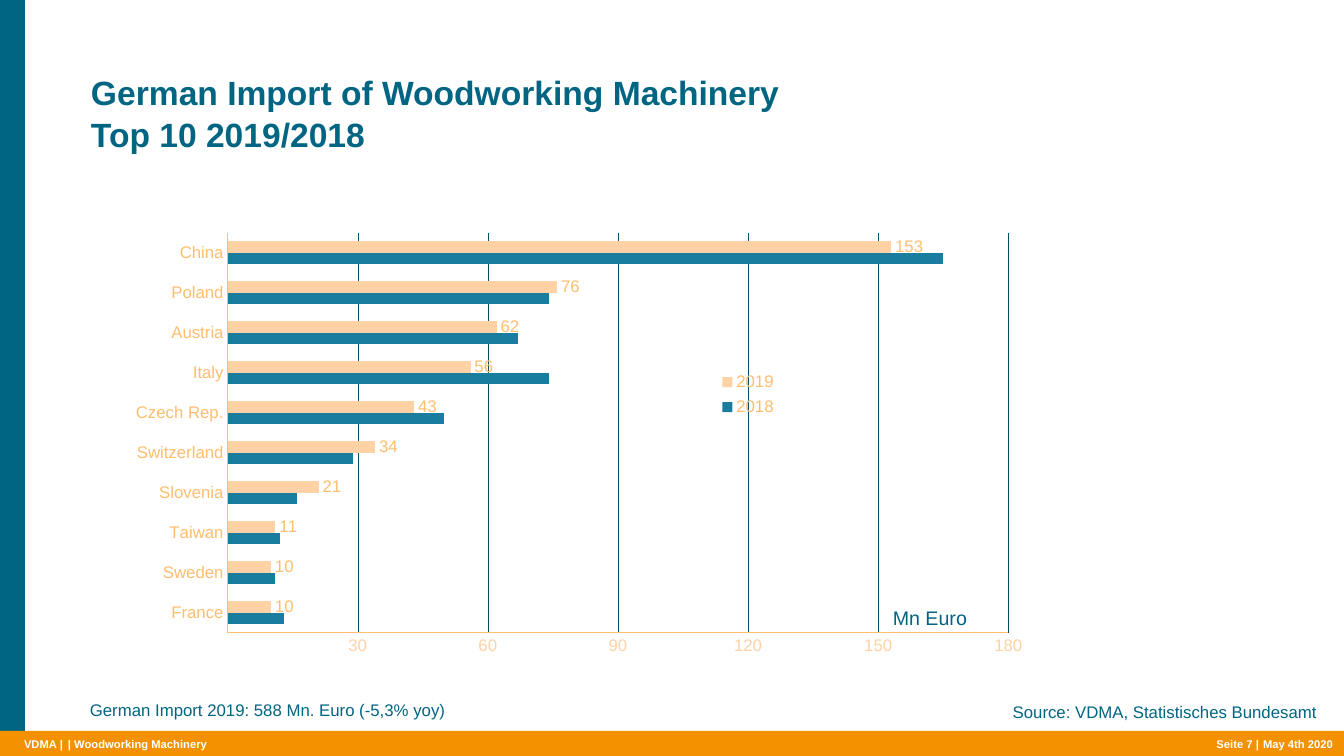
from dataclasses import dataclass

from pptx import Presentation
from pptx import util as u
from pptx.chart import data as chart_data
from pptx.dml.color import RGBColor
from pptx.enum import chart as charts, shapes, text
from pptx.oxml import parse_xml
from pptx.oxml.ns import nsdecls, qn

SCALE = 914400 / 100.8
FONT = "Arial"
TEAL, ORANGE, WHITE = "006582", "F49100", "FFFFFF"
BAR_TEAL, PEACH, LIGHT_ORANGE, GRID = "197DA0", "FFD2A5", "FFBE6E", "004C62"
LEFT, CENTER, RIGHT = text.PP_ALIGN.LEFT, text.PP_ALIGN.CENTER, text.PP_ALIGN.RIGHT
NUMBERS = "#,###"


@dataclass
class Band:
    left: int
    top: int
    width: int
    height: int
    color: str


@dataclass
class Label:
    words: str
    left: int
    top: int
    width: int
    height: int
    size: int = 12
    color: str = TEAL
    align: text.PP_ALIGN = LEFT


@dataclass
class Footer:
    words: str
    left: int
    width: int
    align: text.PP_ALIGN = LEFT


@dataclass
class Series:
    name: str
    values: list[int]
    color: str


BANDS = [Band(0, 0, 25, 756, TEAL), Band(0, 731, 1344, 25, ORANGE)]
LABELS = [
    Label("Source: VDMA, Statistisches Bundesamt", 950, 697, 377, 30, align=RIGHT),
    Label("Mn Euro", 839, 601, 182, 34, 14, align=CENTER),
    Label("German Import 2019: 588 Mn. Euro (-5,3% yoy)", 80, 695, 417, 30),
]
FOOTERS = [
    Footer("VDMA |", 24, 44),
    Footer("| Woodworking Machinery", 68, 388),
    Footer("Seite 7 |", 1205, 54, RIGHT),
    Footer("May 4th 2020", 1263, 76),
]
COUNTRIES = ["France", "Sweden", "Taiwan", "Slovenia", "Switzerland",
             "Czech Rep.", "Italy", "Austria", "Poland", "China"]
SERIES = [
    Series("2018", [13, 11, 12, 16, 29, 50, 74, 67, 74, 165], BAR_TEAL),
    Series("2019", [10, 10, 11, 21, 34, 43, 56, 62, 76, 153], PEACH),
]


def px(length: int) -> int:
    return round(length * SCALE)


def rgb(color: str) -> RGBColor:
    return RGBColor.from_string(color)


def set_font(font, size: int, color: str, bold: bool = False) -> None:
    font.name, font.size, font.bold = FONT, u.Pt(size), bold
    font.color.rgb = rgb(color)


def place(shape, left: int, top: int, width: int, height: int) -> None:
    shape.left, shape.top = px(left), px(top)
    shape.width, shape.height = px(width), px(height)


def clear_margins(frame) -> None:
    frame.margin_left = frame.margin_right = frame.margin_top = frame.margin_bottom = 0


def add_band(page, band: Band) -> None:
    box = page.shapes.add_shape(shapes.MSO_SHAPE.RECTANGLE, px(band.left), px(band.top),
                                px(band.width), px(band.height))
    box.shadow.inherit = False
    box.fill.solid()
    box.fill.fore_color.rgb = rgb(band.color)
    box.line.fill.background()


def add_label(page, label: Label, bold: bool = False):
    box = page.shapes.add_textbox(px(label.left), px(label.top), px(label.width), px(label.height))
    frame = box.text_frame
    frame.word_wrap = True
    para = frame.paragraphs[0]
    para.text = label.words
    para.alignment = label.align
    set_font(para.font, label.size, label.color, bold)
    return frame


def add_footer(page, footer: Footer) -> None:
    label = Label(footer.words, footer.left, 738, footer.width, 13, 8, WHITE, footer.align)
    frame = add_label(page, label, bold=True)
    clear_margins(frame)
    frame.vertical_anchor = text.MSO_ANCHOR.MIDDLE


def set_title(page) -> None:
    title = page.shapes.title
    place(title, 91, 69, 1091, 82)
    frame = title.text_frame
    clear_margins(frame)
    frame.word_wrap = True
    frame.auto_size = text.MSO_AUTO_SIZE.NONE
    frame.vertical_anchor = text.MSO_ANCHOR.TOP
    para = frame.paragraphs[0]
    para.text = "German Import of Woodworking Machinery\vTop 10 2019/2018"
    para.alignment = LEFT
    para.line_spacing = 1.06
    set_font(para.font, 24, TEAL, True)


def set_layout(parent, index: int, x: float, y: float, w: float, h: float,
               inner: bool = False) -> None:
    for old in parent.findall(qn("c:layout")):
        parent.remove(old)
    target = '<c:layoutTarget val="inner"/>' if inner else ""
    parent.insert(index, parse_xml(
        f'<c:layout {nsdecls("c")}><c:manualLayout>{target}'
        '<c:xMode val="edge"/><c:yMode val="edge"/>'
        f'<c:x val="{x}"/><c:y val="{y}"/><c:w val="{w}"/><c:h val="{h}"/>'
        '</c:manualLayout></c:layout>'))


def style_axis(axis, color: str) -> None:
    axis.major_tick_mark = axis.minor_tick_mark = charts.XL_TICK_MARK.NONE
    axis.format.line.color.rgb = rgb(LIGHT_ORANGE)
    axis.format.line.width = u.Pt(0.75)
    set_font(axis.tick_labels.font, 12, color)


def add_import_chart(page) -> None:
    table = chart_data.CategoryChartData()
    table.categories = COUNTRIES
    for series in SERIES:
        table.add_series(series.name, series.values)
    chart = page.shapes.add_chart(charts.XL_CHART_TYPE.BAR_CLUSTERED, px(9), px(190),
                                  px(1041), px(476), table).chart
    chart.has_title = False
    set_font(chart.font, 12, ORANGE)

    plot = chart.plots[0]
    plot.gap_width, plot.overlap = 150, 0
    plot.vary_by_categories = False
    for series, bars in zip(SERIES, plot.series):
        bars.format.fill.solid()
        bars.format.fill.fore_color.rgb = rgb(series.color)
    labels = plot.series[1].data_labels
    labels.show_value = True
    labels.number_format, labels.number_format_is_linked = NUMBERS, False
    labels.position = charts.XL_LABEL_POSITION.OUTSIDE_END
    set_font(labels.font, 12, LIGHT_ORANGE)

    style_axis(chart.category_axis, LIGHT_ORANGE)
    values = chart.value_axis
    style_axis(values, PEACH)
    values.minimum_scale, values.maximum_scale, values.major_unit = 0, 180, 30
    values.tick_labels.number_format = NUMBERS
    values.tick_labels.number_format_is_linked = False
    values.has_major_gridlines = True
    values.major_gridlines.format.line.color.rgb = rgb(GRID)
    values.major_gridlines.format.line.width = u.Pt(0.25)

    chart.has_legend = True
    chart.legend.include_in_layout = True
    set_font(chart.legend.font, 12, LIGHT_ORANGE)
    chart_root = chart.element.find(qn("c:chart"))
    set_layout(chart_root.find(qn("c:plotArea")), 0, 0.21, 0.09, 0.75, 0.84, inner=True)
    set_layout(chart_root.find(qn("c:legend")), 1, 0.68, 0.37, 0.06, 0.12)


def main() -> None:
    deck = Presentation()
    deck.slide_width, deck.slide_height = px(1344), px(756)
    page = deck.slides.add_slide(deck.slide_layouts[5])
    set_title(page)
    for band in BANDS:
        add_band(page, band)
    add_import_chart(page)
    for label in LABELS:
        add_label(page, label)
    for footer in FOOTERS:
        add_footer(page, footer)
    deck.save("out.pptx")


if __name__ == "__main__":
    main()
